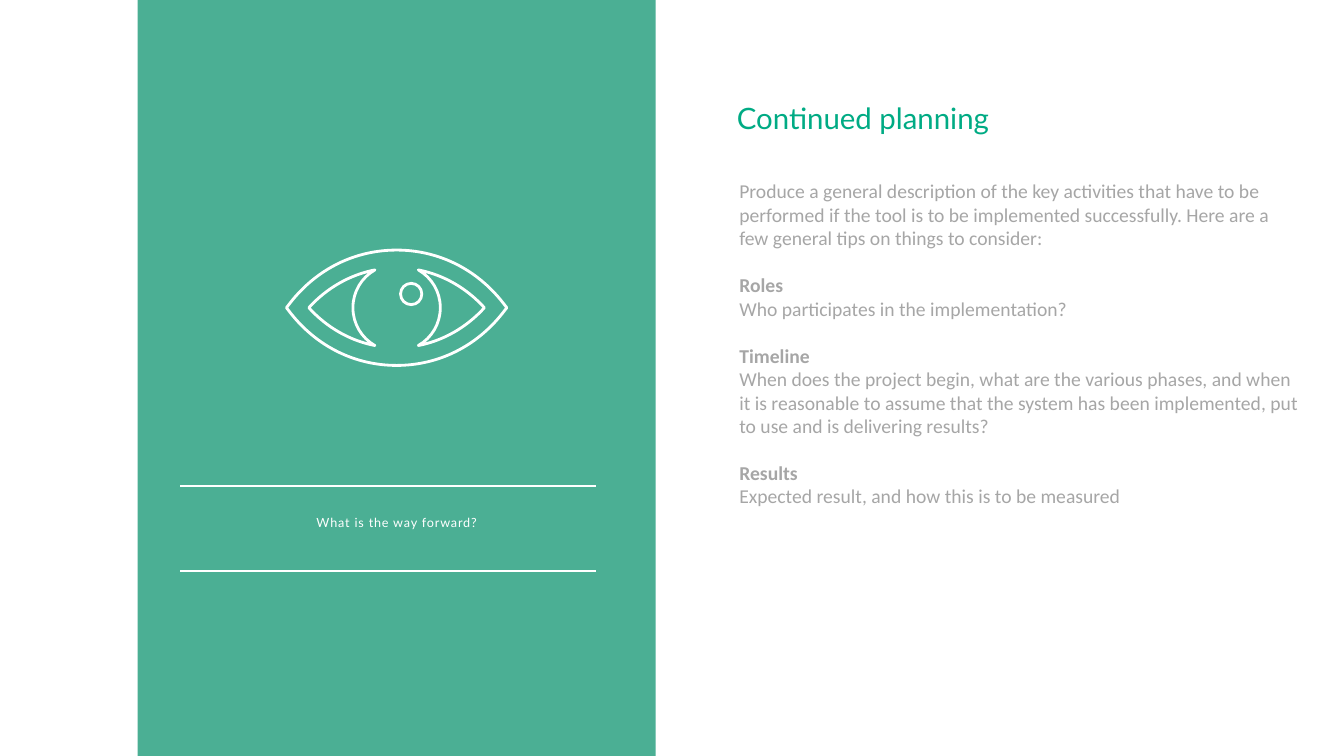
from dataclasses import dataclass

from lxml.etree import SubElement
from pptx import Presentation
from pptx.dml.color import RGBColor
from pptx.enum.shapes import MSO_CONNECTOR as Connector, MSO_SHAPE as Shape
from pptx.enum.text import MSO_AUTO_SIZE as AutoSize, PP_ALIGN as Align
from pptx.oxml.ns import qn
from pptx.util import Pt


@dataclass(frozen=True)
class Theme:
    panel: RGBColor = RGBColor(0x4B, 0xAF, 0x94)
    title: RGBColor = RGBColor(0x00, 0xAB, 0x84)
    body: RGBColor = RGBColor(0xA6, 0xA6, 0xA6)
    white: RGBColor = RGBColor(0xFF, 0xFF, 0xFF)
    title_size: int = 21
    body_size: int = 14
    caption_size: int = 9
    stroke: int = 2


THEME = Theme()
TITLE = {"name": "Lato", "size": Pt(THEME.title_size)}
BODY = {"name": "Calibri", "size": Pt(THEME.body_size)}
CAPTION = {"name": "Lato", "size": Pt(THEME.caption_size)}

INTRO = ("Produce a general description of the key activities that have to be performed "
         "if the tool is to be implemented successfully. Here are a few general tips on "
         "things to consider:")
# Heading, advice, and whether both share one paragraph
TIPS = [
    ("Roles", "Who participates in the implementation?", True),
    ("Timeline", "When does the project begin, what are the various phases, and when it is "
     "reasonable to assume that the system has been implemented, put to use and is "
     "delivering results?", False),
    ("Results", "Expected result, and how this is to be measured", True),
]


def apply(target, values):
    for name, value in values.items():
        setattr(target, name, value)


def add_panel(slide, left, top, width, height):
    panel = slide.shapes.add_shape(Shape.RECTANGLE, Pt(left), Pt(top), Pt(width), Pt(height))
    panel.shadow.inherit = False
    panel.fill.solid()
    panel.fill.fore_color.rgb = THEME.panel
    panel.line.fill.background()


def style_stroke(line):
    line.color.rgb = THEME.white
    line.width = Pt(THEME.stroke)


def add_rules(slide, left, right, heights):
    group = slide.shapes.add_group_shape()
    for y in heights:
        rule = group.shapes.add_connector(Connector.STRAIGHT, Pt(left), Pt(y), Pt(right), Pt(y))
        style_stroke(rule.line)
        SubElement(rule._element.spPr, qn("a:effectLst"))


def add_text_box(slide, left, top, width, height, inset_x=0, inset_y=0):
    box = slide.shapes.add_textbox(Pt(left), Pt(top), Pt(width), Pt(height))
    apply(box.text_frame, {
        "word_wrap": True, "auto_size": AutoSize.NONE,
        "margin_left": Pt(inset_x), "margin_right": Pt(inset_x),
        "margin_top": Pt(inset_y), "margin_bottom": Pt(inset_y),
    })
    return box.text_frame


def write(paragraph, text, font, color, bold=False, **layout):
    apply(paragraph, layout)
    run = paragraph.add_run()
    run.text = text
    apply(run.font, {**font, "bold": bold})
    run.font.color.rgb = color
    return run


def reflected(segments, x_sign, y_sign):
    """The mirrored outline, run backwards so that it continues the first."""
    return [tuple((x * x_sign, y * y_sign) for x, y in reversed(segment))
            for segment in reversed(segments)]


def with_lower_half(segments):
    return segments + reflected(segments, 1, -1)


def with_all_quarters(segments):
    left_half = with_lower_half(segments)
    return left_half + reflected(left_half, -1, 1)


def eye_contours():
    """Closed outlines around the eye's centre: two points a line, four a curve."""
    lid = with_all_quarters([((0, -41.2), (-30, -41.2), (-57, -27.5), (-75.6, -4)),
                             ((-75.6, -4), (-78.7, 0))])
    white = with_lower_half([((-62.7, 0), (-50, -14), (-33.5, -23.5), (-15.5, -27)),
                             ((-15.5, -27), (-25, -21.6), (-31.2, -11.5), (-31.2, 0))])
    radius, handle = 7.6, 4.2
    circle = with_all_quarters([((0, -radius), (-handle, -radius),
                                 (-radius, -handle), (-radius, 0))])
    glint = [tuple((x + 10.4, y - 9.8) for x, y in segment) for segment in circle]
    return [lid, white, reflected(white, -1, 1), glint]


def add_eye(slide, center_x, center_y):
    contours = [[[(Pt(center_x + x), Pt(center_y + y)) for x, y in segment]
                 for segment in contour] for contour in eye_contours()]
    builder = slide.shapes.build_freeform(*contours[0][0][0])
    for index, contour in enumerate(contours):
        if index:
            builder.move_to(*contour[0][0])
        builder.add_line_segments([segment[-1] for segment in contour])
    eye = builder.convert_to_shape()

    # Bend the straight segments that have control points
    segments = [segment for contour in contours for segment in contour]
    for element, segment in zip(list(eye._element.iter(qn("a:lnTo"))), segments):
        if len(segment) == 4:
            element.tag = qn("a:cubicBezTo")
            element.remove(element[0])
            for x, y in segment[1:]:
                SubElement(element, qn("a:pt"), x=str(x - eye.left), y=str(y - eye.top))

    eye.shadow.inherit = False
    eye.fill.background()
    style_stroke(eye.line)
    SubElement(eye.line._get_or_add_ln(), qn("a:round"))


def add_caption(slide, text):
    frame = add_text_box(slide, 202, 364.3, 162.7, 13)
    run = write(frame.paragraphs[0], text, CAPTION, THEME.white,
                alignment=Align.CENTER, line_spacing=1.3)
    run._r.get_or_add_rPr().set("spc", "60")


def add_body(slide):
    frame = add_text_box(slide, 526.1, 124.5, 404, 275, inset_x=2, inset_y=3.6)
    write(frame.paragraphs[0], INTRO, BODY, THEME.body)
    for heading, advice, shared in TIPS:
        paragraph = frame.add_paragraph()
        write(paragraph, heading, BODY, THEME.body, bold=True, space_before=Pt(16.6))
        if shared:
            paragraph.add_line_break()
        else:
            paragraph = frame.add_paragraph()
        write(paragraph, advice, BODY, THEME.body)


def main():
    presentation = Presentation()
    apply(presentation, {"slide_width": Pt(960), "slide_height": Pt(540)})
    slide = presentation.slides.add_slide(presentation.slide_layouts[6])

    # Green panel with the eye and the question
    add_panel(slide, 98.3, 0, 370, 540)
    add_caption(slide, "What is the way forward?")
    add_rules(slide, 128.6, 425.6, (347.2, 407.8))
    add_eye(slide, 283.3, 219.8)

    # Planning advice
    add_body(slide)
    title = add_text_box(slide, 526.3, 71.3, 260.6, 49)
    write(title.paragraphs[0], "Continued planning", TITLE, THEME.title)

    presentation.save("out.pptx")


if __name__ == "__main__":
    main()
